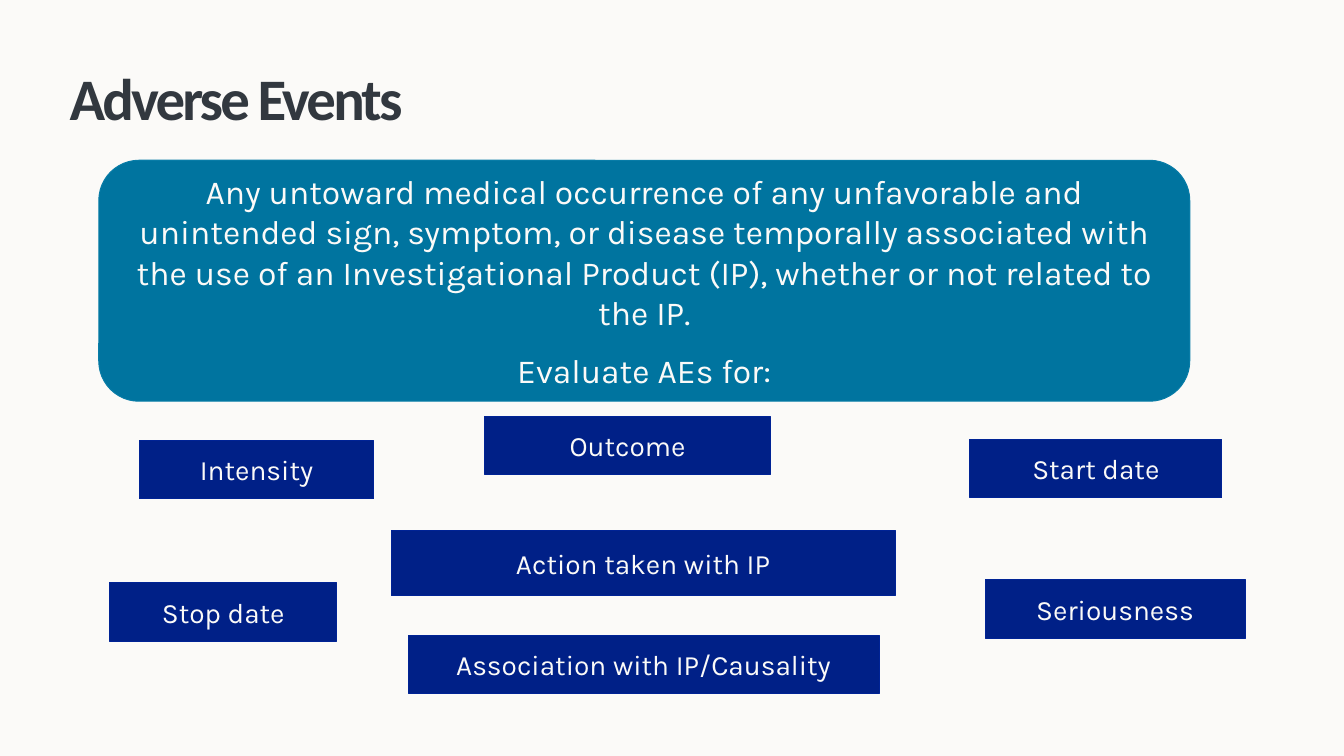
from pptx import Presentation
from pptx.dml.color import RGBColor
from pptx.enum.shapes import MSO_SHAPE
from pptx.enum.text import MSO_ANCHOR, PP_ALIGN
from pptx.util import Inches, Pt

TITLE = "Adverse Events"
DEFINITION = [
    "Any untoward medical occurrence of any unfavorable and unintended sign, "
    "symptom, or disease temporally associated with the use of an "
    "Investigational Product (IP), whether or not related to the IP.",
    "Evaluate AEs for:",
]
ROW = 0.58
CRITERIA = [
    ("Association with IP/Causality", 4.05, 6.3, 4.67, ROW),
    ("Intensity", 1.38, 4.37, 2.33, ROW),
    ("Stop date", 1.09, 5.78, 2.25, ROW),
    ("Outcome", 4.81, 4.13, 2.83, ROW),
    ("Start date", 9.62, 4.36, 2.5, ROW),
    ("Seriousness", 9.77, 5.75, 2.58, ROW),
    ("Action taken with IP", 3.88, 5.26, 5, 0.65),
]
PAPER, INK = "FBFAF8", "32383F"
TEAL, TEAL_EDGE = "00749F", "087CA7"
NAVY, NAVY_EDGE = "002087", "002395"


def paint(color_format, color):
    color_format.rgb = RGBColor.from_string(color)


def add_text(paragraph, text, font, size, color):
    run = paragraph.add_run()
    run.text = text
    run.font.name = font
    run.font.size = Pt(size)
    paint(run.font.color, color)
    return run


def add_box(slide, kind, bounds, fill, edge, lines, size):
    shape = slide.shapes.add_shape(kind, *map(Inches, bounds))
    shape.shadow.inherit = False
    shape.fill.solid()
    paint(shape.fill.fore_color, fill)
    shape.line.width = Pt(0.75)
    paint(shape.line.color, edge)
    frame = shape.text_frame
    frame.word_wrap = True
    frame.vertical_anchor = MSO_ANCHOR.MIDDLE
    for index, line in enumerate(lines):
        paragraph = frame.add_paragraph() if index else frame.paragraphs[0]
        paragraph.alignment = PP_ALIGN.CENTER
        if index:
            paragraph.space_before = Pt(13)
        add_text(paragraph, line, "Karla", size, PAPER)


def add_title(slide):
    box = slide.shapes.add_textbox(*map(Inches, (0.56, 0.34, 12.04, 1.25)))
    frame = box.text_frame
    frame.word_wrap = True
    frame.vertical_anchor = MSO_ANCHOR.MIDDLE
    frame.margin_left = frame.margin_right = Inches(0.13)
    frame.margin_top = frame.margin_bottom = Inches(0.07)
    run = add_text(frame.paragraphs[0], TITLE, "Calibri", 42, INK)
    run.font.bold = True
    run.font._element.set("spc", "-200")


def main():
    presentation = Presentation()
    presentation.slide_width = Inches(13.33)
    presentation.slide_height = Inches(7.5)
    slide = presentation.slides.add_slide(presentation.slide_layouts[6])
    slide.background.fill.solid()
    paint(slide.background.fill.fore_color, PAPER)
    add_title(slide)
    add_box(slide, MSO_SHAPE.ROUNDED_RECTANGLE, (0.98, 1.59, 10.82, 2.39),
            TEAL, TEAL_EDGE, DEFINITION, 24)
    for label, *bounds in CRITERIA:
        add_box(slide, MSO_SHAPE.RECTANGLE, bounds, NAVY, NAVY_EDGE, [label], 20)
    presentation.save("out.pptx")


if __name__ == "__main__":
    main()
